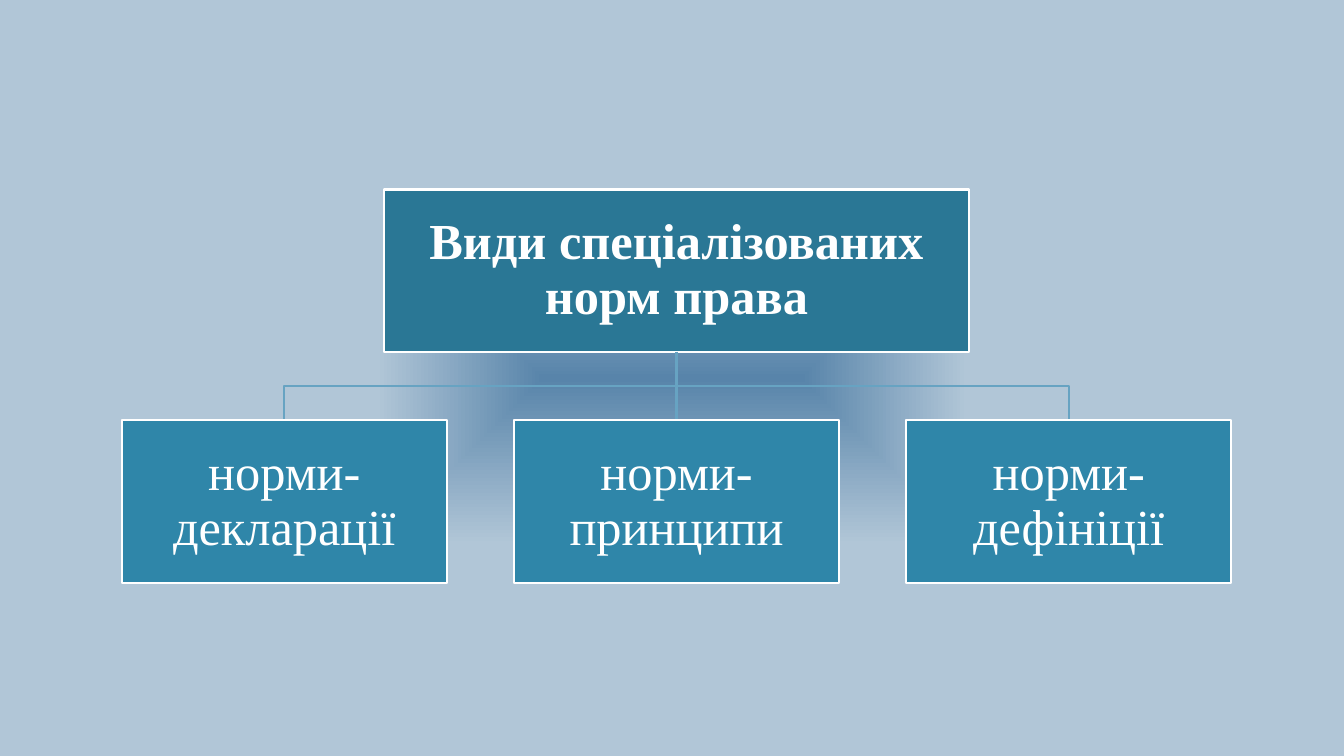
from pptx import Presentation
from pptx.dml.color import RGBColor as RGB
from pptx.enum.shapes import MSO_CONNECTOR as LINK, MSO_SHAPE as SHAPE
from pptx.enum.text import MSO_ANCHOR as ANCHOR, MSO_AUTO_SIZE as FIT, PP_ALIGN as ALIGN
from pptx.oxml import parse_xml
from pptx.oxml.ns import nsdecls
from pptx.util import Inches, Pt
from lxml import etree

THEME = {
    "root": "2A7795", "leaf": "2F86A9", "edge": "FFFFFF", "link": "67A3C2",
    "text": "FFFFFF", "glow": "5884AA", "back": "B1C6D7",
    "font": "Times New Roman", "size": Pt(36), "line": Pt(1.5),
}
FRAME = {"word_wrap": True, "auto_size": FIT.NONE, "vertical_anchor": ANCHOR.MIDDLE}
FRAME |= {f"margin_{side}": Inches(0.03) for side in ("left", "right", "top", "bottom")}
PARA = {"alignment": ALIGN.CENTER, "line_spacing": 0.9}


def draw(line, color):
    line.color.rgb = RGB.from_string(THEME[color])
    line.width = THEME["line"]


def style(box, text, color, bold):
    box.fill.solid()
    box.fill.fore_color.rgb = RGB.from_string(THEME[color])
    draw(box.line, "edge")
    frame = box.text_frame
    frame.text = text
    para = frame.paragraphs[0]
    font = para.runs[0].font
    look = {"name": THEME["font"], "size": THEME["size"], "bold": bold}
    for item, values in ((frame, FRAME), (para, PARA), (font, look)):
        for key, value in values.items():
            setattr(item, key, value)
    font.color.rgb = RGB.from_string(THEME["text"])


# Slide
deck = Presentation()
deck.slide_width, deck.slide_height = Inches(13.33), Inches(7.5)
slide = deck.slides.add_slide(deck.slide_layouts[5])
shapes = slide.shapes

# Background glow
slide.element.cSld.insert(0, parse_xml(f"""
<p:bg {nsdecls("p", "a")}><p:bgPr><a:gradFill rotWithShape="1"><a:gsLst>
<a:gs pos="0"><a:srgbClr val="{THEME["glow"]}"><a:alpha val="80000"/></a:srgbClr></a:gs>
<a:gs pos="44000"><a:srgbClr val="{THEME["back"]}"/></a:gs>
<a:gs pos="100000"><a:srgbClr val="{THEME["back"]}"/></a:gs>
</a:gsLst><a:path path="shape"><a:fillToRect l="50000" t="50000" r="50000" b="50000"/></a:path>
</a:gradFill><a:effectLst/></p:bgPr></p:bg>"""))

# Tree measures
mid, step = Inches(6.71), Inches(3.89)
wide, leaf, high = Inches(5.8), Inches(3.22), Inches(1.61)
top, low = Inches(1.88), Inches(4.17)
base = top + high
bus = (base + low) // 2

# Root box
root = shapes.title
root.left, root.top, root.width, root.height = mid - wide // 2, top, wide, high
style(root, "Види спеціалізованих норм права", "root", True)

# Branches and leaf boxes
names = ["норми-декларації", "норми-принципи", "норми-дефініції"]
for col, name in enumerate(names, start=-1):
    x = mid + col * step
    if col:
        path = shapes.build_freeform(mid, base)
        path.add_line_segments([(mid, bus), (x, bus), (x, low)], close=False)
        link = path.convert_to_shape()
        link.fill.background()
        link.shadow.inherit = False
    else:
        link = shapes.add_connector(LINK.STRAIGHT, mid, base, mid, low)
    draw(link.line, "link")
    if not col:
        etree.SubElement(link.element.spPr, "{http://schemas.openxmlformats.org/drawingml/2006/main}effectLst")

    box = shapes.add_shape(SHAPE.RECTANGLE, x - leaf // 2, low, leaf, high)
    box.shadow.inherit = False
    style(box, name, "leaf", False)

deck.save("out.pptx")
